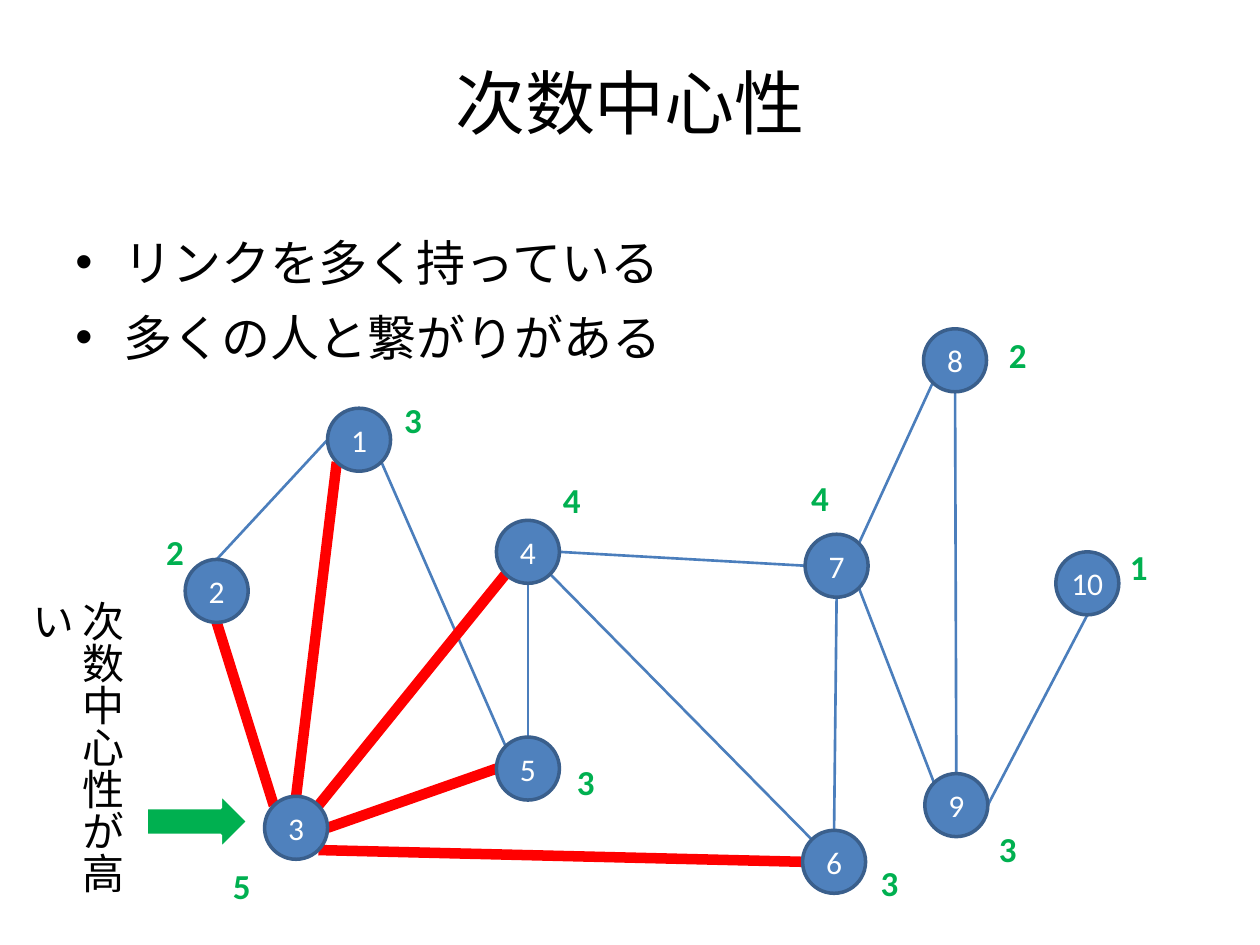
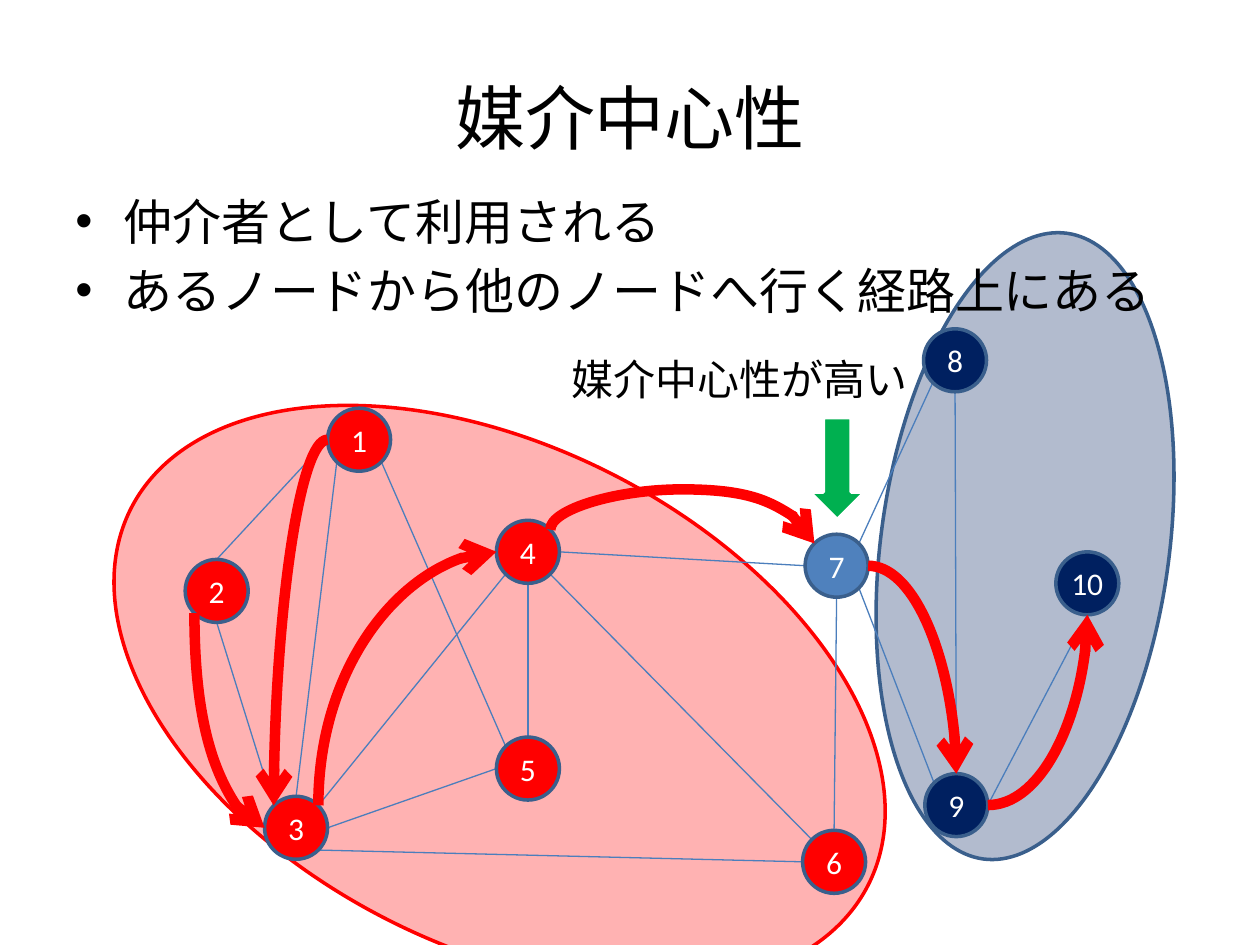
import collections
import math
import typing

import lxml.etree
import pptx
import pptx.dml.color
import pptx.dml.fill
import pptx.enum.shapes
import pptx.enum.text
import pptx.oxml.ns
import pptx.shapes.autoshape
import pptx.shapes.connector
import pptx.slide
import pptx.text.text
import pptx.util

Inches = pptx.util.Inches
Pt = pptx.util.Pt
Kind = pptx.enum.shapes.MSO_SHAPE
Link = pptx.enum.shapes.MSO_CONNECTOR
Align = pptx.enum.text.PP_ALIGN
Anchor = pptx.enum.text.MSO_ANCHOR
qn = pptx.oxml.ns.qn

FONT = "Calibri"
BLACK, WHITE, RED = "000000", "FFFFFF", "FF0000"
GREEN, NAVY, BLUE = "00B050", "002060", "4F81BD"
RIM, EDGE = "3A5F8C", "4B7EBC"
SIZE = 0.5
TOP, TOP_LEFT, LEFT, LOW_LEFT, LOW, LOW_RIGHT, RIGHT, TOP_RIGHT = range(8)


class Box(typing.NamedTuple):
    left: float
    top: float
    width: float
    height: float


class Node(typing.NamedTuple):
    left: float
    top: float
    mark_x: float
    mark_y: float


class Edge(typing.NamedTuple):
    start: int
    exit: int
    end: int
    entry: int


class Step(typing.NamedTuple):
    edge: Edge
    upright: bool = False
    rise: float = 0


NODES = {
    1: Node(2.6, 3.24, 3.11, 3.11),
    2: Node(1.47, 4.44, 1.22, 4.16),
    3: Node(2.1, 6.32, 1.75, 6.81),
    4: Node(3.94, 4.13, 4.37, 3.75),
    5: Node(3.94, 5.85, 4.48, 5.99),
    6: Node(6.37, 6.59, 6.89, 6.79),
    7: Node(6.39, 4.24, 6.34, 3.73),
    8: Node(7.33, 2.61, 7.91, 2.6),
    9: Node(7.34, 6.14, 7.83, 6.52),
    10: Node(8.38, 4.38, 8.87, 4.28),
}
EDGES = [
    Edge(5, LEFT, 3, RIGHT),
    Edge(3, TOP_LEFT, 2, LOW),
    Edge(6, LEFT, 3, LOW_RIGHT),
    Edge(4, LOW_LEFT, 3, TOP_RIGHT),
    Edge(1, LOW_LEFT, 3, TOP),
    Edge(1, LOW_RIGHT, 5, TOP_LEFT),
    Edge(7, LEFT, 4, RIGHT),
    Edge(4, LOW_RIGHT, 6, TOP_LEFT),
    Edge(9, TOP, 8, LOW),
    Edge(9, RIGHT, 10, LOW),
    Edge(1, LEFT, 2, TOP),
    Edge(7, TOP_RIGHT, 8, LOW_LEFT),
    Edge(7, LOW_RIGHT, 9, TOP_LEFT),
    Edge(7, LOW, 6, TOP),
    Edge(5, TOP, 4, LOW),
]
STEPS = [
    Step(Edge(1, LEFT, 3, TOP_LEFT)),
    Step(Edge(2, LOW_LEFT, 3, LEFT), upright=True),
    Step(Edge(4, TOP_RIGHT, 7, TOP_LEFT), upright=True, rise=0.32),
    Step(Edge(3, TOP_RIGHT, 4, LEFT), upright=True),
    Step(Edge(7, RIGHT, 9, TOP)),
    Step(Edge(9, RIGHT, 10, LOW)),
]
HUB = 3
TEAMS = {n: RED for n in range(1, 7)} | {n: NAVY for n in range(8, 11)}


def rgb(code: str) -> pptx.dml.color.RGBColor:
    return pptx.dml.color.RGBColor.from_string(code)


def place(box: Box) -> list[int]:
    return [Inches(side) for side in box]


def paint(fill: pptx.dml.fill.FillFormat, code: str, alpha: int = 100) -> None:
    fill.solid()
    fill.fore_color.rgb = rgb(code)
    if alpha < 100:
        tint = fill._xPr.find(".//" + qn("a:srgbClr"))
        lxml.etree.SubElement(tint, qn("a:alpha"), val=str(alpha * 1000))


def write(frame: pptx.text.text.TextFrame, *lines: str, size: float = 24,
          color: str = BLACK, bold: bool = False, align: Align = Align.LEFT,
          anchor: Anchor = Anchor.TOP, wrap: bool = True, bullet: bool = False,
          space: float = 1) -> None:
    frame.word_wrap = wrap
    frame.vertical_anchor = anchor
    for index, line in enumerate(lines):
        para = frame.add_paragraph() if index else frame.paragraphs[0]
        para.alignment = align
        run = para.add_run()
        run.text = line
        run.font.name = FONT
        run.font.size = Pt(size)
        run.font.bold = bold
        run.font.color.rgb = rgb(color)
        if bullet:
            para.line_spacing = space
            para.space_before = Pt(size * 0.2)
            props = para._p.get_or_add_pPr()
            props.set("marL", str(Inches(0.38)))
            props.set("indent", str(-Inches(0.38)))
            lxml.etree.SubElement(props, qn("a:buFont"), typeface="Arial")
            lxml.etree.SubElement(props, qn("a:buChar"), char="•")


def label(slide: pptx.slide.Slide, box: Box, *lines: str,
          **style: typing.Any) -> pptx.text.text.TextFrame:
    frame = slide.shapes.add_textbox(*place(box)).text_frame
    write(frame, *lines, **style)
    return frame


def shape(slide: pptx.slide.Slide, kind: Kind, box: Box, fill: str, line: str,
          turn: float = 0, alpha: int = 100) -> pptx.shapes.autoshape.Shape:
    item = slide.shapes.add_shape(kind, *place(box))
    item.shadow.inherit = False
    item.rotation = turn
    paint(item.fill, fill, alpha)
    item.line.color.rgb = rgb(line)
    item.line.width = Pt(2)
    return item


def begin(deck: pptx.presentation.Presentation, title: str,
          box: Box) -> pptx.slide.Slide:
    slide = deck.slides.add_slide(deck.slide_layouts[5])
    head = slide.shapes.title
    head.left, head.top, head.width, head.height = place(box)
    write(head.text_frame, title, size=40, align=Align.CENTER,
          anchor=Anchor.MIDDLE)
    return slide


def site(number: int, spot: int) -> tuple[float, float]:
    node, half, angle = NODES[number], SIZE / 2, spot * math.pi / 4
    return (node.left + half - half * math.sin(angle),
            node.top + half - half * math.cos(angle))


def join(slide: pptx.slide.Slide, kind: Link, ends: tuple[float, ...],
         color: str, width: float) -> pptx.shapes.connector.Connector:
    line = slide.shapes.add_connector(kind, *[Inches(end) for end in ends])
    line.line.color.rgb = rgb(color)
    line.line.width = Pt(width)
    lxml.etree.SubElement(line._element.spPr, qn("a:effectLst"))
    return line


def link(slide: pptx.slide.Slide, edge: Edge, color: str, width: float) -> None:
    ends = site(edge.start, edge.exit) + site(edge.end, edge.entry)
    join(slide, Link.STRAIGHT, ends, color, width)


def curve(slide: pptx.slide.Slide, step: Step) -> None:
    edge = step.edge
    x1, y1 = site(edge.start, edge.exit)
    x2, y2 = site(edge.end, edge.entry)
    ends, drop = (x1, y1, x2, y2), y2 - y1
    if step.upright:
        sign = -1 if drop > 0 else 1
        mid_x, mid_y = (x1 + x2) / 2, (y1 + y2) / 2
        off_x, off_y = sign * drop / 2, sign * (x1 - x2) / 2
        ends = (mid_x - off_x, mid_y - off_y, mid_x + off_x, mid_y + off_y)
    line = join(slide, Link.CURVE, ends, RED, 6)
    props = line._element.spPr
    if step.upright:
        props.find(qn("a:xfrm")).set("rot", str((180 - sign * 90) * 60000
                                                if drop > 0 else 90 * 60000))
    form = props.find(qn("a:prstGeom"))
    if step.rise:
        bend = round(-step.rise / drop * 100000)
        guides = form.find(qn("a:avLst"))
        lxml.etree.SubElement(guides, qn("a:gd"), name="adj1", fmla=f"val {bend}")
    else:
        form.set("prst", "curvedConnector2")
    lxml.etree.SubElement(props.find(qn("a:ln")), qn("a:tailEnd"), type="arrow")


def graph(slide: pptx.slide.Slide, width: float, teams: dict[int, str],
          hub: int = 0) -> None:
    for edge in EDGES:
        link(slide, edge, EDGE, width)
    for edge in EDGES:
        if hub in (edge.start, edge.end):
            link(slide, edge, RED, 6)
    for number, node in NODES.items():
        box = Box(node.left, node.top, SIZE, SIZE)
        disc = shape(slide, Kind.OVAL, box, teams.get(number, BLUE), RIM)
        write(disc.text_frame, str(number), size=18, color=WHITE,
              align=Align.CENTER, anchor=Anchor.MIDDLE, wrap=False)


def degree(deck: pptx.presentation.Presentation) -> None:
    slide = begin(deck, "次数中心性", Box(0.5, 0.3, 9, 1.01))
    label(slide, Box(0.5, 1.75, 9, 1.49), "リンクを多く持っている",
          "多くの人と繋がりがある", size=28, bullet=True, space=1.1)
    graph(slide, 1.5, {}, HUB)
    shape(slide, Kind.RIGHT_ARROW, Box(1.16, 6.3, 0.81, 0.44), GREEN, WHITE)
    note = label(slide, Box(0.45, 4.67, 0.61, 2.71), "次数中心性が高い")
    note._txBody.bodyPr.set("vert", "eaVert")
    counts = collections.Counter(
        end for edge in EDGES for end in (edge.start, edge.end))
    for number, node in NODES.items():
        label(slide, Box(node.mark_x, node.mark_y, 0.34, 0.44),
              str(counts[number]), size=20, color=GREEN, bold=True, wrap=False)


def between(deck: pptx.presentation.Presentation) -> None:
    slide = begin(deck, "媒介中心性", Box(0.5, 0.3, 9, 1.25))
    shape(slide, Kind.OVAL, Box(6.99, 1.83, 2.29, 5.01), NAVY, RIM, 7.6, 30)
    shape(slide, Kind.OVAL, Box(0.68, 3.55, 6.57, 3.96), RED, RED, 27.1, 30)
    label(slide, Box(0.5, 1.47, 9, 0.94), "仲介者として利用される",
          "あるノードから他のノードへ行く経路上にある", size=28, bullet=True)
    graph(slide, 0.75, TEAMS)
    shape(slide, Kind.RIGHT_ARROW, Box(6.24, 3.5, 0.81, 0.44), GREEN, WHITE, 90)
    label(slide, Box(4.44, 2.76, 2.89, 0.5), "媒介中心性が高い")
    for step in STEPS:
        curve(slide, step)


def main() -> None:
    deck = pptx.Presentation()
    deck.slide_width, deck.slide_height = Inches(10), Inches(7.5)
    degree(deck)
    between(deck)
    deck.save("out.pptx")


if __name__ == "__main__":
    main()
